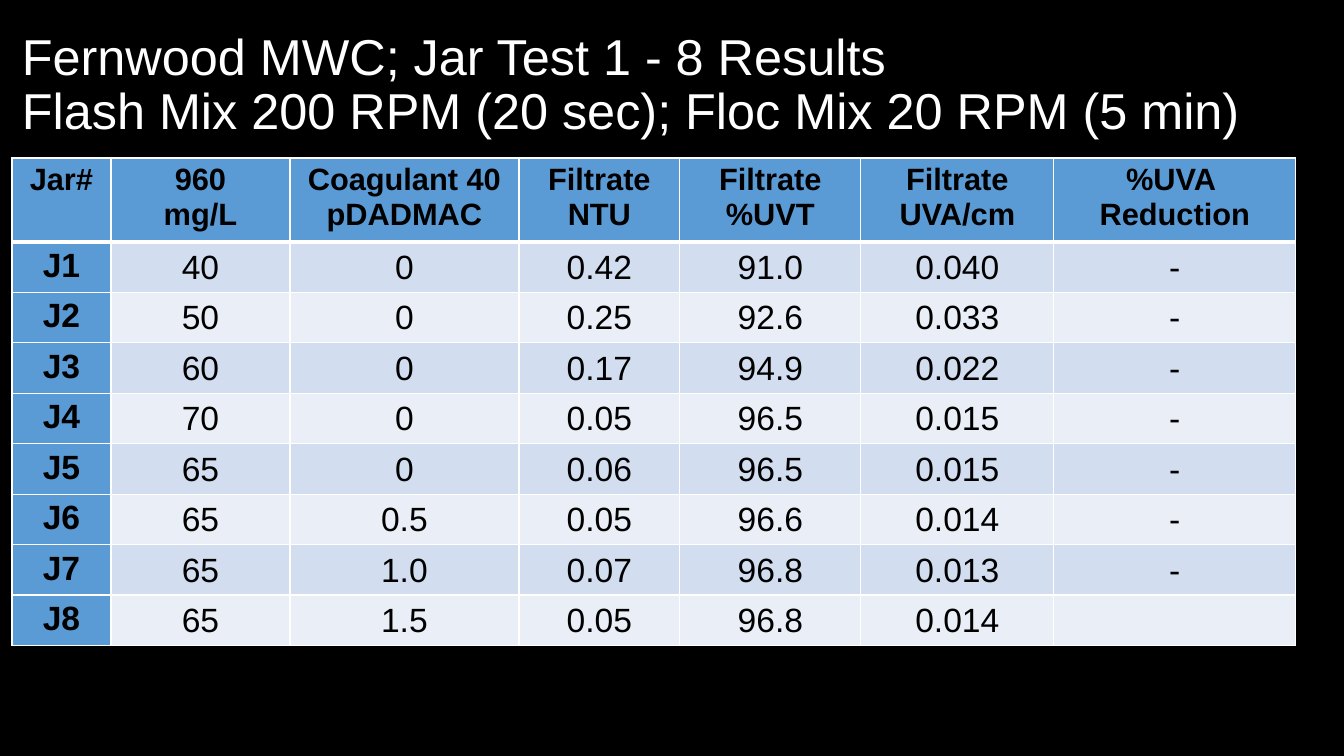
from dataclasses import dataclass

from lxml import etree
from pptx import Presentation
from pptx import util as u
from pptx.dml.color import RGBColor
from pptx.enum import text
from pptx.oxml.ns import qn

PX = 914400 / 100.8


def px(count):
    return u.Emu(round(count * PX))


@dataclass(frozen=True)
class Theme:
    font: str = "Arial"
    background: str = "000000"
    title: str = "FFFFFF"
    ink: str = "000000"
    border: str = "FFFFFF"
    accent: str = "5B9BD5"
    bands: tuple = ("D2DEEF", "EAEFF7")
    title_size: int = 36
    header_size: int = 22
    body_size: int = 24


class SlideBuilder:
    def __init__(self, deck, theme):
        self.theme = theme
        self.page = deck.slides.add_slide(deck.slide_layouts[6])
        fill = self.page.background.fill
        fill.solid()
        fill.fore_color.rgb = RGBColor.from_string(theme.background)

    def style(self, para, size, color, bold=False):
        para.font.name = self.theme.font
        para.font.size = u.Pt(size)
        para.font.bold = bold
        para.font.color.rgb = RGBColor.from_string(color)

    def title(self, words, left, top, width, height):
        box = self.page.shapes.add_textbox(px(left), px(top), px(width), px(height))
        frame = box.text_frame
        frame.word_wrap = True
        frame.vertical_anchor = text.MSO_ANCHOR.MIDDLE
        frame.text = words
        para = frame.paragraphs[0]
        para.line_spacing = 0.9
        self.style(para, self.theme.title_size, self.theme.title)

    def borders(self, cell, bottom):
        properties = cell._tc.get_or_add_tcPr()
        for side, points in (("L", 1), ("R", 1), ("T", 1), ("B", bottom)):
            line = etree.SubElement(properties, qn(f"a:ln{side}"), w=str(u.Pt(points)))
            fill = etree.SubElement(line, qn("a:solidFill"))
            etree.SubElement(fill, qn("a:srgbClr"), val=self.theme.border)

    def cell(self, cell, words, row, column):
        theme = self.theme
        header = row == 0
        label = header or column == 0
        cell.text = words
        for para in cell.text_frame.paragraphs:
            para.alignment = text.PP_ALIGN.CENTER
            size = theme.header_size if header else theme.body_size
            self.style(para, size, theme.ink, bold=label)
        if not label:
            cell.vertical_anchor = text.MSO_ANCHOR.MIDDLE
            cell.margin_left = cell.margin_right = cell.margin_top = px(1)
            cell.margin_bottom = 0
        self.borders(cell, bottom=3 if header else 1)
        cell.fill.solid()
        color = theme.accent if label else theme.bands[(row - 1) % 2]
        cell.fill.fore_color.rgb = RGBColor.from_string(color)

    def table(self, rows, left, top, widths, heights):
        table = self.page.shapes.add_table(
            len(rows), len(widths), px(left), px(top), px(sum(widths)), px(sum(heights))
        ).table
        for column, width in zip(table.columns, widths):
            column.width = px(width)
        for line, height in zip(table.rows, heights):
            line.height = px(height)
        for row, values in enumerate(rows):
            for column, words in enumerate(values):
                self.cell(table.cell(row, column), words, row, column)


HEADERS = ("Jar#", "960\nmg/L", "Coagulant 40\npDADMAC", "Filtrate\nNTU",
           "Filtrate\n%UVT", "Filtrate\nUVA/cm", "%UVA \nReduction")
JARS = (
    ("J1", "40", "0", "0.42", "91.0", "0.040", "-"),
    ("J2", "50", "0", "0.25", "92.6", "0.033", "-"),
    ("J3", "60", "0", "0.17", "94.9", "0.022", "-"),
    ("J4", "70", "0", "0.05", "96.5", "0.015", "-"),
    ("J5", "65", "0", "0.06", "96.5", "0.015", "-"),
    ("J6", "65", "0.5", "0.05", "96.6", "0.014", "-"),
    ("J7", "65", "1.0", "0.07", "96.8", "0.013", "-"),
    ("J8", "65", "1.5", "0.05", "96.8", "0.014", ""),
)


def main():
    deck = Presentation()
    deck.slide_width, deck.slide_height = px(1344), px(756)
    slide = SlideBuilder(deck, Theme())

    # Title
    slide.title(
        "Fernwood MWC; Jar Test 1 - 8 Results\v"
        "Flash Mix 200 RPM (20 sec); Floc Mix 20 RPM (5 min)",
        left=12, top=13, width=1313, height=146,
    )

    # Jar test results
    slide.table(
        (HEADERS, *JARS), left=12, top=158,
        widths=(99, 179, 229, 161, 181, 193, 242),
        heights=[79] + [47] * len(JARS),
    )

    deck.save("out.pptx")


if __name__ == "__main__":
    main()
